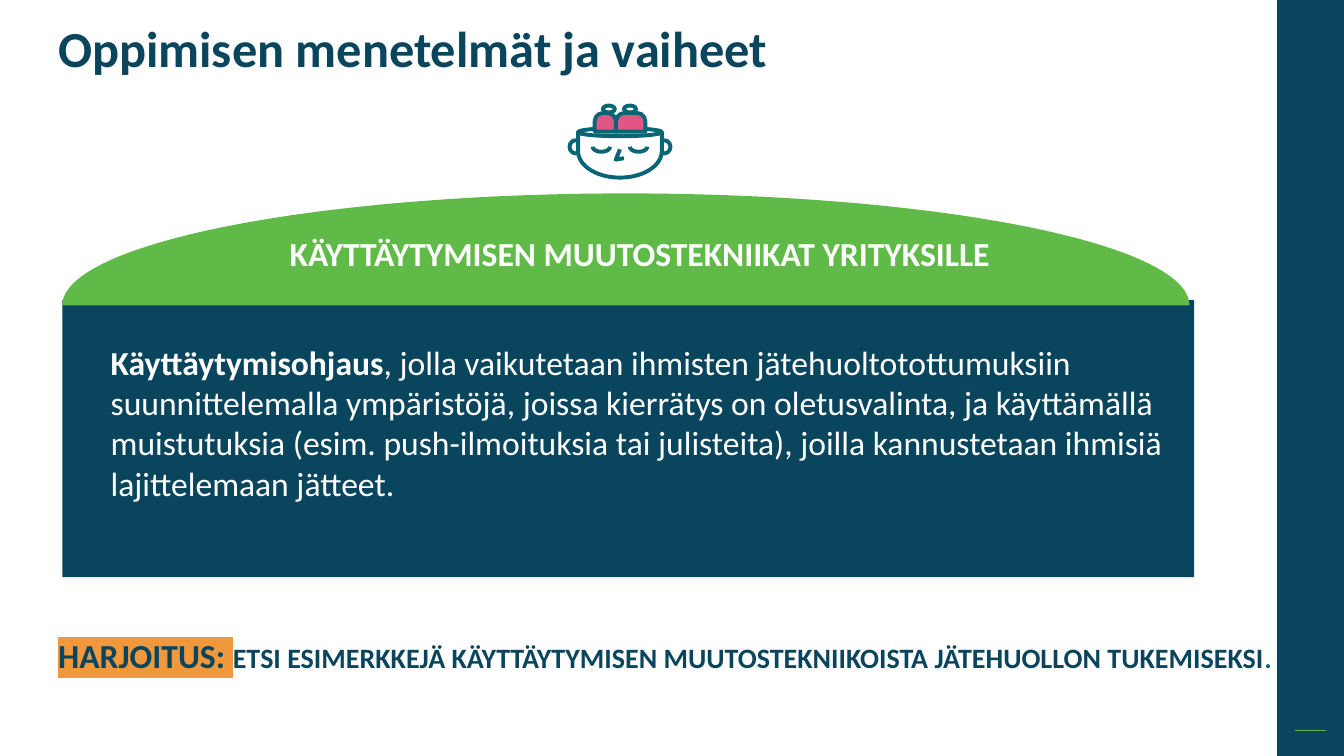
from dataclasses import dataclass
from math import cos, pi, sin
from lxml.etree import SubElement
from pptx import Presentation
from pptx.dml.color import RGBColor
from pptx.enum.shapes import MSO_CONNECTOR, MSO_SHAPE
from pptx.enum.text import MSO_ANCHOR, PP_ALIGN
from pptx.oxml.ns import qn
from pptx.util import Pt


@dataclass(frozen=True)
class Theme:
    font: str = "Calibri"
    navy: str = "09465E"
    green: str = "60BA47"
    white: str = "FFFFFF"
    teal: str = "086575"
    pink: str = "E25684"
    amber: str = "F1983D"
    dot: str = "086D6E"
    title: int = 36
    body: int = 24
    task: int = 20
    stroke: float = 2.8


THEME = Theme()


def paint(shape, fill=None, line=None):
    shape.shadow.inherit = False
    if fill:
        shape.fill.solid()
        shape.fill.fore_color.rgb = RGBColor.from_string(fill)
    else:
        shape.fill.background()
    if line:
        shape.line.color.rgb = RGBColor.from_string(line)
        shape.line.width = Pt(THEME.stroke)
    else:
        shape.line.fill.background()
    return shape


def block(shapes, kind, box, fill=None, line=None):
    shape = shapes.add_shape(kind, *[Pt(v) for v in box])
    return paint(shape, fill, line)


def trace(shapes, points, close=True, fill=None, line=None):
    spots = [(Pt(x), Pt(y)) for x, y in points]
    form = shapes.build_freeform(*spots[0], scale=1.0)
    form.add_line_segments(spots[1:], close=close)
    return paint(form.convert_to_shape(), fill, line)


def curve(x, y, wide, high, steps):
    turns = [pi * i / steps for i in range(steps + 1)]
    return [(x - wide * cos(t), y + high * sin(t)) for t in turns]


def add_run(para, text, size=THEME.body, color=THEME.navy, bold=True, mark=None):
    run = para.add_run()
    run.text = text
    font = run.font
    font.size, font.bold, font.name = Pt(size), bold, THEME.font
    font.color.rgb = RGBColor.from_string(color)
    if mark:
        props = run._r.get_or_add_rPr()
        light = SubElement(props, qn("a:highlight"))
        SubElement(light, qn("a:srgbClr"), val=mark)
        props.find(qn("a:solidFill")).addnext(light)


def write(shape, runs, align=PP_ALIGN.LEFT, space=None):
    frame = shape.text_frame
    frame.word_wrap = True
    frame.vertical_anchor = MSO_ANCHOR.TOP
    para = frame.paragraphs[0]
    para.alignment = align
    if space:
        para.line_spacing = space
    for text, form in runs:
        add_run(para, text, **form)


def label(shapes, box, runs, **form):
    write(shapes.add_textbox(*[Pt(v) for v in box]), runs, **form)


def draw_bar(shapes, box):
    x, y, w, h = box
    block(shapes, MSO_SHAPE.RECTANGLE, box, THEME.navy)
    mid, low = x + w / 2, y + h - 18
    rule = shapes.add_connector(
        MSO_CONNECTOR.STRAIGHT, Pt(mid - 11), Pt(low), Pt(mid + 11), Pt(low))
    rule.line.color.rgb = RGBColor.from_string(THEME.green)
    rule.line.width = Pt(1)
    SubElement(rule._element.spPr, qn("a:effectLst"))


def draw_panel(shapes, box):
    x, y, w, h = box
    block(shapes, MSO_SHAPE.RECTANGLE, box, THEME.navy)
    dome = curve(x + 402.6, y + 3.8, 402.6, -80, 90)
    trace(shapes, dome, fill=THEME.green)
    label(shapes, (x + 112.5, y - 51.8, 600, 36),
          [("KÄYTTÄYTYMISEN MUUTOSTEKNIIKAT YRITYKSILLE", {"color": THEME.white})],
          align=PP_ALIGN.CENTER)
    card = block(shapes, MSO_SHAPE.RECTANGLE,
                 (x + 27.5, y + 26, w - 38, 143.3), THEME.navy)
    write(card, [
        ("Käyttäytymisohjaus", {"color": THEME.white}),
        (", jolla vaikutetaan ihmisten jätehuoltotottumuksiin suunnittelemalla "
         "ympäristöjä, joissa kierrätys on oletusvalinta, ja käyttämällä "
         "muistutuksia (esim. push-ilmoituksia tai julisteita), joilla "
         "kannustetaan ihmisiä lajittelemaan jätteet.",
         {"color": THEME.white, "bold": False}),
    ])


def draw_face(shapes, box):
    x, y, w, h = box
    mid = x + w / 2
    face = shapes.add_group_shape().shapes
    pen = {"line": THEME.teal}
    ink = {"fill": THEME.white, **pen}
    for ear in (x + 1.4, x + w - 10):
        block(face, MSO_SHAPE.OVAL, (ear, y + 26, 8.6, 9.4), **ink)
    bowl = curve(mid, y + 33.8, 29.9, 18.9, 40)
    top = y + 20
    trace(face, [(mid - 29.9, top), *bowl, (mid + 29.9, top)], **ink)
    block(face, MSO_SHAPE.OVAL, (mid - 29.9, y + 17.3, 59.8, 5.8), **ink)
    for left, wide, ring in ((19.4, 15.2, 25.2), (34.6, 21, 40.3)):
        lobe = block(face, MSO_SHAPE.ROUND_2_SAME_RECTANGLE,
                     (x + left, y + 6.5, wide, 13.3), THEME.pink, THEME.teal)
        lobe.adjustments[0] = 0.45
        block(face, MSO_SHAPE.OVAL, (x + ring, y + 1.2, 8.6, 5), **ink)
    for eye in (mid - 13.3, mid + 13.3):
        trace(face, curve(eye, y + 30.6, 6.2, 3.6, 16), close=False, **pen)
    nose = [(mid, y + 32.4), (mid - 3, y + 39.8), (mid + 2.8, y + 38.8)]
    trace(face, nose, close=False, **pen)


def draw_task(shapes, box):
    label(shapes, box, [
        ("HARJOITUS: ", {"mark": THEME.amber}),
        ("ETSI ESIMERKKEJÄ KÄYTTÄYTYMISEN MUUTOSTEKNIIKOISTA JÄTEHUOLLON "
         "TUKEMISEKSI", {"size": THEME.task}),
        (".", {"size": THEME.task, "color": THEME.dot}),
    ])


def main():
    deck = Presentation()
    deck.slide_width, deck.slide_height = Pt(960), Pt(540)
    shapes = deck.slides.add_slide(deck.slide_layouts[6]).shapes
    draw_bar(shapes, (912.2, 0, 47.8, 540))
    label(shapes, (34.5, 13.5, 587, 40),
          [("Oppimisen menetelmät ja vaiheet", {"size": THEME.title})], space=0.9)
    draw_panel(shapes, (44.5, 214.4, 808.4, 197.8))
    draw_face(shapes, (405.4, 74.2, 74.9, 54))
    draw_task(shapes, (34.5, 450, 887, 60))
    deck.save("out.pptx")


if __name__ == "__main__":
    main()
